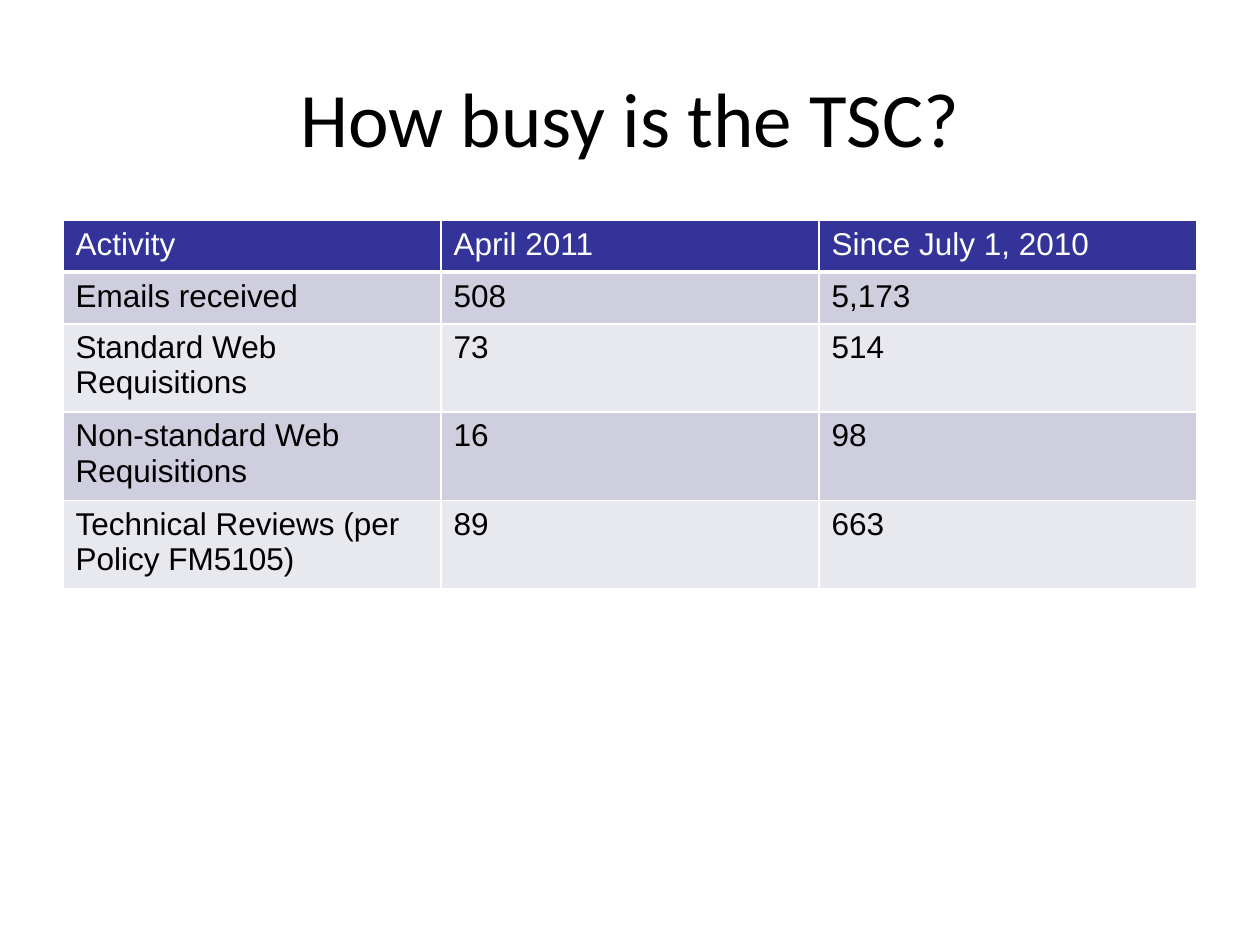
from lxml import etree
from pptx import Presentation
from pptx.dml.color import RGBColor
from pptx.enum.text import MSO_ANCHOR, PP_ALIGN
from pptx.oxml.ns import qn
from pptx.util import Inches, Pt

CENTER = PP_ALIGN.CENTER
LEFT = PP_ALIGN.LEFT
MIDDLE = MSO_ANCHOR.MIDDLE
WIDTH, HEIGHT = 10, 7.5
COLUMNS, ROWS = 20, 30

ACTIVITY = [
    ("Activity", "April 2011", "Since July 1, 2010"),
    ("Emails received", "508", "5,173"),
    ("Standard Web Requisitions", "73", "514"),
    ("Non-standard Web Requisitions", "16", "98"),
    ("Technical Reviews (per Policy FM5105)", "89", "663"),
]


def rgb(value):
    return RGBColor.from_string(value)


class SlideBuilder:
    title_font, body_font = "Calibri", "Arial"
    ink, paper = "000000", "FFFFFF"
    header, bands = "333399", ("CECEDE", "E8E8EF")
    row_height = 0.41

    def __init__(self, prs):
        self.s = prs.slides.add_slide(prs.slide_layouts[6])
        fill = self.s.background.fill
        fill.solid()
        fill.fore_color.rgb = rgb(self.paper)

    def grid(self, col, row):
        return Inches(col * WIDTH / COLUMNS), Inches(row * HEIGHT / ROWS)

    def add_text(self, tf, text, font, size, color, align=LEFT):
        p = tf.paragraphs[0]
        p.alignment = align
        r = p.add_run()
        r.text = text
        r.font.name = font
        r.font.size = Pt(size)
        r.font.bold = False
        r.font.color.rgb = rgb(color)

    def title(self, text, col, row, cols, rows):
        sp = self.s.shapes.add_textbox(*self.grid(col, row), *self.grid(cols, rows))
        tf = sp.text_frame
        tf.word_wrap = True
        tf.vertical_anchor = MIDDLE
        self.add_text(tf, text, self.title_font, 44, self.ink, CENTER)

    def borders(self, cell, bottom):
        tc_pr = cell._tc.get_or_add_tcPr()
        sides = (("L", 1), ("R", 1), ("T", 1), ("B", bottom))
        for i, (side, width) in enumerate(sides):
            ln = etree.Element(qn(f"a:ln{side}"), w=str(Pt(width)))
            fill = etree.SubElement(ln, qn("a:solidFill"))
            etree.SubElement(fill, qn("a:srgbClr"), val=self.paper)
            tc_pr.insert(i, ln)

    def table(self, data, col, row, cols):
        left, top = self.grid(col, row)
        width, _ = self.grid(cols, 0)
        height = Inches(self.row_height * len(data))
        table = self.s.shapes.add_table(
            len(data), len(data[0]), left, top, width, height
        ).table
        for i, values in enumerate(data):
            is_header = i == 0
            fill = self.header if is_header else self.bands[(i - 1) % 2]
            color = self.paper if is_header else self.ink
            for j, text in enumerate(values):
                cell = table.cell(i, j)
                cell.fill.solid()
                cell.fill.fore_color.rgb = rgb(fill)
                self.add_text(cell.text_frame, text, self.body_font, 18, color)
                self.borders(cell, 3 if is_header else 1)


def main():
    prs = Presentation()
    prs.slide_width, prs.slide_height = Inches(WIDTH), Inches(HEIGHT)
    slide = SlideBuilder(prs)
    slide.title("How busy is the TSC?", 1, 1.2, 18, 5)
    slide.table(ACTIVITY, 1, 7, 18)
    prs.save("out.pptx")


if __name__ == "__main__":
    main()
